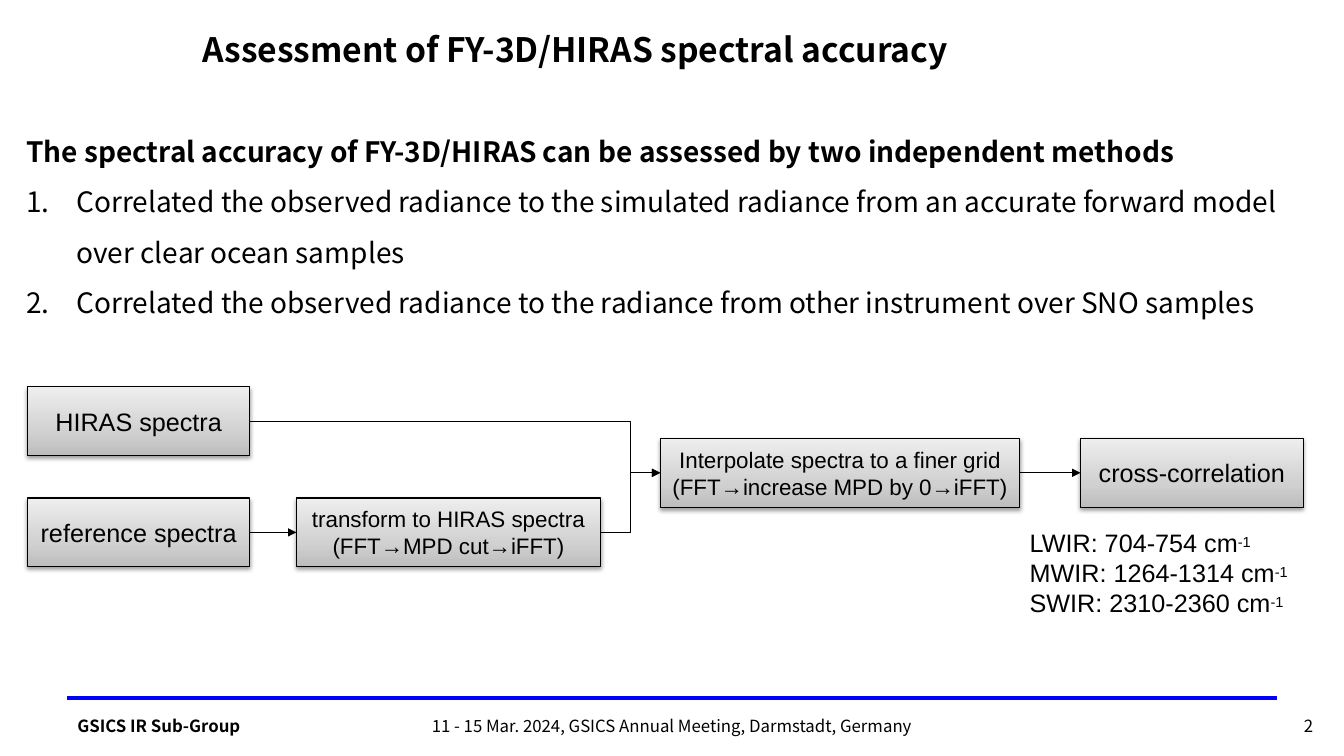
from copy import deepcopy

from lxml.etree import SubElement
from pptx import Presentation
from pptx.dml.color import RGBColor
from pptx.enum.shapes import MSO_CONNECTOR as LINK, MSO_SHAPE
from pptx.enum.text import MSO_ANCHOR as ANCHOR, PP_ALIGN as ALIGN
from pptx.oxml.ns import qn
from pptx.util import Cm, Pt

COLORS = {"ink": "000000", "rule": "0000FF",
          "dark": "BDBDBD", "mid": "D1D1D1", "light": "EEEEEE"}
SANS, ARIAL = "Noto Sans CJK SC", "Arial"
RIGHT, LEFT = 3, 1
BOX_HEIGHT, SIDE_WIDTH = 1.73, 5.61


def rgb(name):
    return RGBColor.from_string(COLORS[name])


def style(paragraph, font, size, bold=False):
    for run in paragraph.runs:
        run.font.name, run.font.size, run.font.bold = font, Pt(size), bold
        run.font.color.rgb = rgb("ink")


def add_text(slide, place, text, size, font=SANS, bold=False,
             align=ALIGN.LEFT, anchor=ANCHOR.TOP):
    box = slide.shapes.add_textbox(*map(Cm, place))
    frame = box.text_frame
    frame.word_wrap = True
    frame.vertical_anchor = anchor
    frame.text = text
    for paragraph in frame.paragraphs:
        paragraph.alignment = align
        style(paragraph, font, size, bold)
    return frame


def add_methods(slide, heading, methods):
    frame = add_text(slide, (0.41, 2.84, 32.05, 6.53),
                     "\n".join([heading, *methods]), 20)
    for paragraph in frame.paragraphs:
        paragraph.line_spacing = 1.5
    style(frame.paragraphs[0], SANS, 20, bold=True)
    for method in frame.paragraphs[1:]:
        properties = method._p.get_or_add_pPr()
        properties.set("marL", str(Cm(1.27)))
        properties.set("indent", str(-Cm(1.27)))
        SubElement(properties, qn("a:buFont"), typeface="+mj-lt")
        SubElement(properties, qn("a:buAutoNum"), type="arabicPeriod")


def add_step(slide, left, top, width, text, size):
    step = slide.shapes.add_shape(MSO_SHAPE.RECTANGLE, Cm(left), Cm(top),
                                  Cm(width), Cm(BOX_HEIGHT))
    # Grey gradient, dark at the bottom
    step.fill.gradient()
    step.fill.gradient_angle = 90
    stops = step.fill._fill._gradFill.gsLst
    stops.insert(1, deepcopy(stops[0]))
    for stop, position, color in zip(step.fill.gradient_stops, (0, 0.35, 1),
                                     ("dark", "mid", "light")):
        stop.position = position
        stop.color.rgb = rgb(color)
    step.line.color.rgb = rgb("ink")
    step.line.width = Pt(0.75)
    # Soft shadow below
    step.shadow.inherit = False
    effects = step._element.spPr.find(qn("a:effectLst"))
    shadow = SubElement(effects, qn("a:outerShdw"), blurRad="40000",
                        dist="20000", dir="5400000", rotWithShape="0")
    tint = SubElement(shadow, qn("a:srgbClr"), val=COLORS["ink"])
    SubElement(tint, qn("a:alpha"), val="38000")
    # Label
    frame = step.text_frame
    frame.word_wrap = True
    frame.margin_left = frame.margin_right = Cm(0.1)
    frame.vertical_anchor = ANCHOR.MIDDLE
    frame.text = text
    for paragraph in frame.paragraphs:
        paragraph.alignment = ALIGN.CENTER
        style(paragraph, ARIAL, size)
    return step


def add_line(slide, kind, ends, color, width):
    line = slide.shapes.add_connector(kind, *map(Cm, ends))
    line.line.color.rgb = rgb(color)
    line.line.width = Pt(width)
    SubElement(line._element.spPr, qn("a:effectLst"))
    return line


def add_arrow(slide, source, target, kind=LINK.STRAIGHT, bend=None):
    arrow = add_line(slide, kind, (0, 0, 0, 0), "ink", 0.75)
    arrow.begin_connect(source, RIGHT)
    arrow.end_connect(target, LEFT)
    SubElement(arrow.line._get_or_add_ln(), qn("a:tailEnd"), type="triangle")
    if bend is not None:
        guides = arrow._element.spPr.prstGeom.get_or_add_avLst()
        SubElement(guides, qn("a:gd"), name="adj1", fmla=f"val {bend}")


def add_bands(slide, bands):
    frame = add_text(slide, (25.7, 13.16, 7.82, 2.57), "\n".join(bands),
                     18, ARIAL)
    for band in frame.paragraphs:
        exponent = band.add_run()
        exponent.text = "-1"
        style(band, ARIAL, 18)
        exponent.font._element.set("baseline", "20000")


def add_footer(slide):
    add_line(slide, LINK.STRAIGHT, (1.7, 17.58, 32.18, 17.58), "rule", 3)
    for left, width, text, bold, align in (
            (1.7, 7.65, "GSICS IR Sub-Group", True, ALIGN.LEFT),
            (9.3, 15.27, "11 - 15 Mar. 2024, GSICS Annual Meeting, Darmstadt, Germany",
             False, ALIGN.CENTER),
            (32.44, 1.07, "2", False, ALIGN.CENTER)):
        add_text(slide, (left, 17.81, width, 0.94), text, 12, bold=bold,
                 align=align, anchor=ANCHOR.MIDDLE)


def main():
    deck = Presentation()
    deck.slide_width, deck.slide_height = Cm(33.87), Cm(19.05)
    slide = deck.slides.add_slide(deck.slide_layouts[6])

    # Title and methods
    add_text(slide, (4.85, 0.61, 25.43, 1.27),
             "Assessment of FY-3D/HIRAS spectral accuracy", 24, bold=True)
    add_methods(
        slide,
        "The spectral accuracy of FY-3D/HIRAS can be assessed by two independent methods",
        ["Correlated the observed radiance to the simulated radiance from an "
         "accurate forward model over clear ocean samples",
         "Correlated the observed radiance to the radiance from other "
         "instrument over SNO samples"])

    # Processing flow
    upper, middle, lower = 9.75, 11.05, 12.55
    hiras = add_step(slide, 0.69, upper, SIDE_WIDTH, "HIRAS spectra", 18)
    reference = add_step(slide, 0.69, lower, SIDE_WIDTH, "reference spectra", 18)
    transform = add_step(slide, 7.47, lower, 7.67,
                         "transform to HIRAS spectra\n(FFT→MPD cut→iFFT)", 16)
    interpolate = add_step(
        slide, 16.64, middle, 9.06,
        "Interpolate spectra to a finer grid\n(FFT→increase MPD by 0→iFFT)", 16)
    correlation = add_step(slide, 27.23, middle, SIDE_WIDTH,
                           "cross-correlation", 18)
    add_arrow(slide, hiras, interpolate, LINK.ELBOW, 92700)
    add_arrow(slide, reference, transform)
    add_arrow(slide, transform, interpolate, LINK.ELBOW, 50000)
    add_arrow(slide, interpolate, correlation)

    # Spectral bands and footer
    add_bands(slide, ["LWIR: 704-754 cm", "MWIR: 1264-1314 cm",
                      "SWIR: 2310-2360 cm"])
    add_footer(slide)
    deck.save("out.pptx")


if __name__ == "__main__":
    main()
